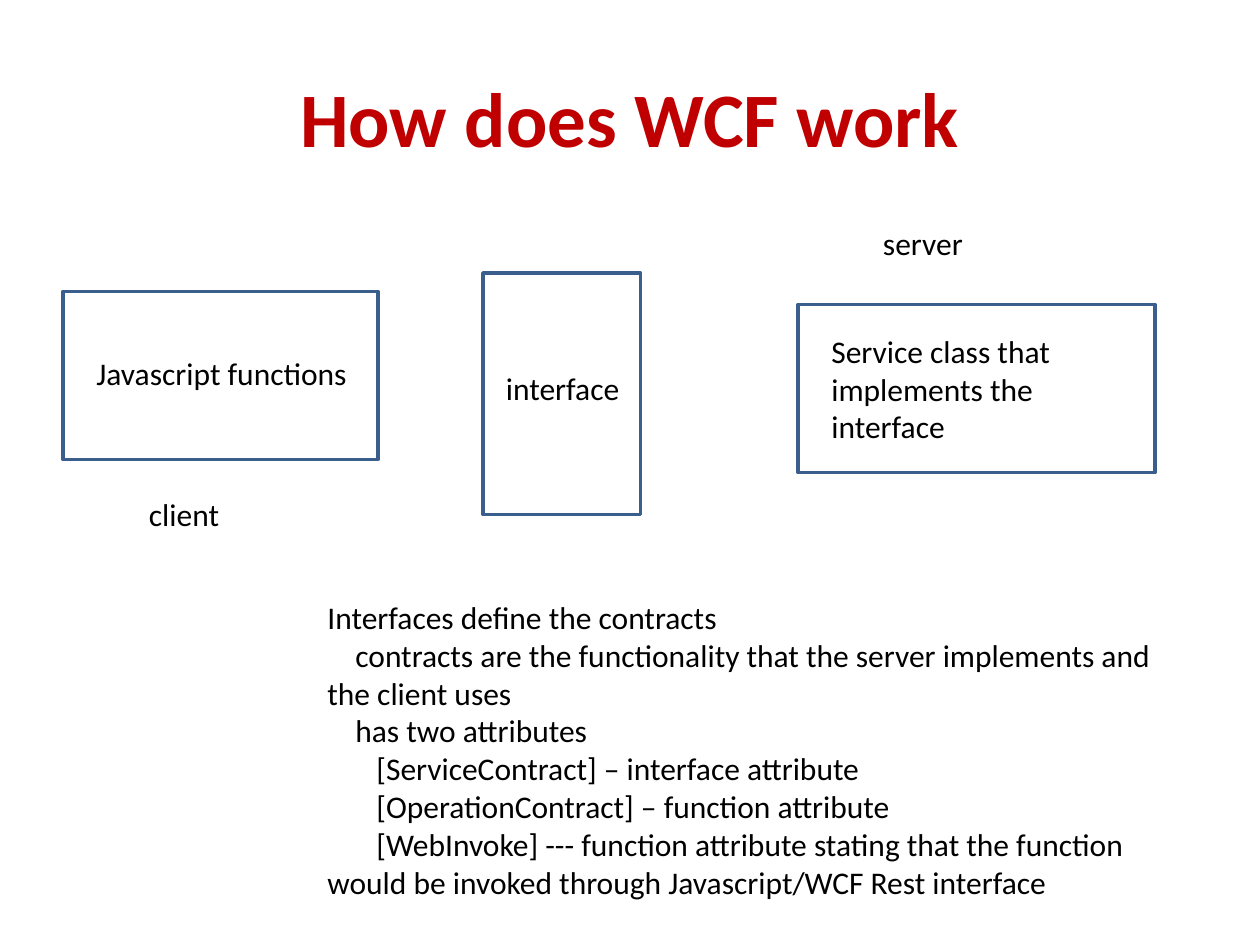
from pptx import Presentation
from pptx.dml.color import RGBColor
from pptx.enum.shapes import MSO_SHAPE as Shape
from pptx.enum.text import MSO_ANCHOR as Anchor, PP_ALIGN as Align
from pptx.util import Pt

FONT = "Calibri"
COLORS = {"title": "C00000", "text": "000000", "outline": "3A5F8C"}


def format_text(para, size, color, bold=False):
    for span in para.runs:
        span.font.name = FONT
        span.font.size = Pt(size)
        span.font.bold = bold
        span.font.color.rgb = RGBColor.from_string(COLORS[color])


def add_text(left, top, width, height, lines):
    """Add a text box from (first-line indent, text) pairs."""
    box = page.shapes.add_textbox(Pt(left), Pt(top), Pt(width), Pt(height))
    frame = box.text_frame
    frame.word_wrap = True
    frame.text = "\n".join(text for _, text in lines)
    for para, (indent, _) in zip(frame.paragraphs, lines):
        format_text(para, 18, "text")
        if indent:
            properties = para._p.get_or_add_pPr()
            properties.set("marL", "0")
            properties.set("indent", str(Pt(indent)))


deck = Presentation()
deck.slide_width, deck.slide_height = Pt(720), Pt(540)
page = deck.slides.add_slide(deck.slide_layouts[5])

# Title
title = page.shapes.title
title.left, title.top, title.width, title.height = Pt(36), Pt(21.6), Pt(648), Pt(90)
title.text_frame.text = "How does WCF work"
title.text_frame.vertical_anchor = Anchor.MIDDLE
heading = title.text_frame.paragraphs[0]
heading.alignment = Align.CENTER
format_text(heading, 44, "title", bold=True)

# Frames of the client, the server and the interface between them
frames = [
    (36, 166.5, 180, 96),
    (456, 174, 204, 96),
    (276, 156, 90, 138),
]
for bounds in frames:
    box = page.shapes.add_shape(Shape.RECTANGLE, *map(Pt, bounds))
    box.shadow.inherit = False
    box.fill.background()
    box.line.color.rgb = RGBColor.from_string(COLORS["outline"])
    box.line.width = Pt(2)

# Labels in and around the frames
labels = [
    (48, 199, 168, 29, "Javascript functions"),
    (282, 207.5, 84, 29, "interface"),
    (468, 186, 183, 73, "Service class that implements the interface"),
    (78, 279.5, 84, 29, "client"),
    (497.5, 124.5, 66, 29, "server"),
]
for *bounds, text in labels:
    add_text(*bounds, [(0, text)])

# Explanation
add_text(180, 338.2, 492, 181.5, [
    (0, "Interfaces define the contracts"),
    (16, "contracts are the functionality that the server implements and the client uses"),
    (16, "has two attributes"),
    (28, "[ServiceContract] – interface attribute"),
    (28, "[OperationContract] – function attribute"),
    (28, "[WebInvoke] --- function attribute stating that the function "
         "would be invoked through Javascript/WCF Rest interface"),
])

deck.save("out.pptx")
